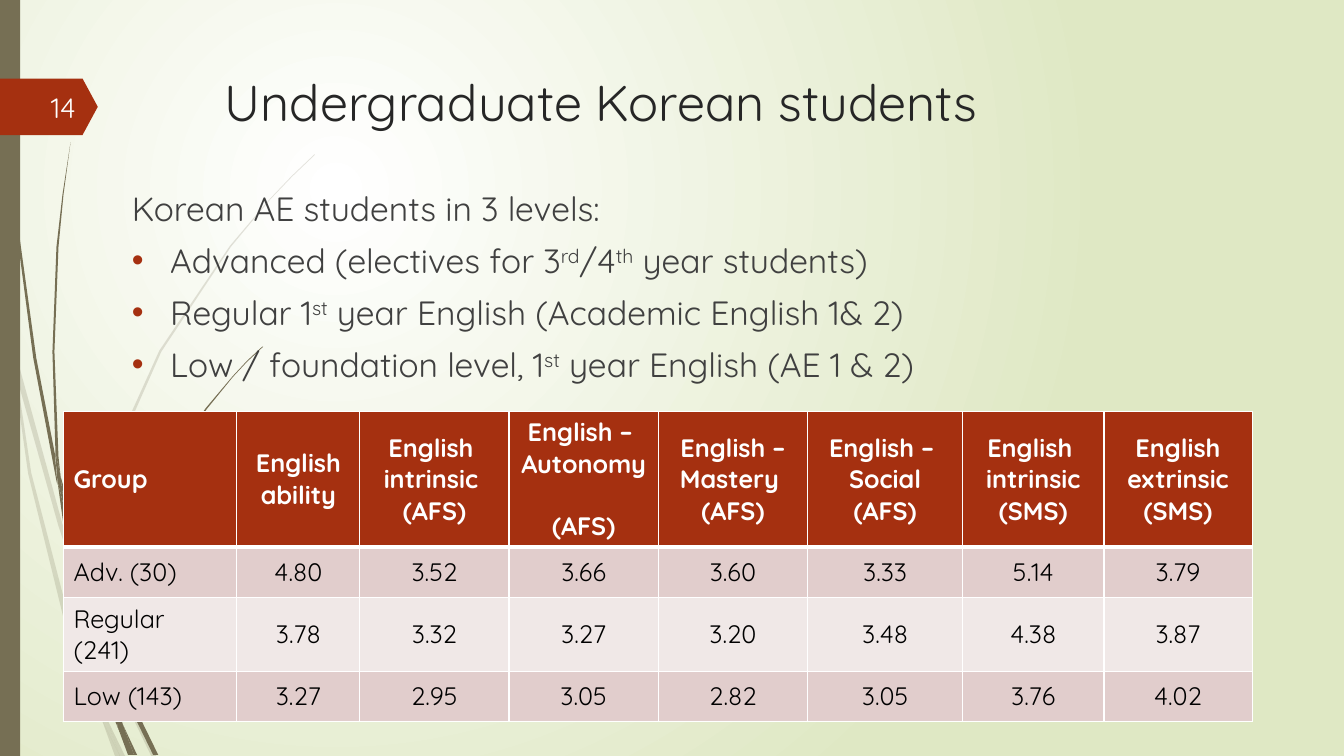
from pptx import Presentation
from pptx.dml.color import RGBColor
from pptx.enum.shapes import MSO_SHAPE
from pptx.enum.text import MSO_ANCHOR, PP_ALIGN
from pptx.oxml.ns import qn
from pptx.util import Pt
from lxml.etree import SubElement

PX = 9144
FONT = "Quicksand"
WHITE = RGBColor(0xFF, 0xFF, 0xFF)
BLACK = RGBColor(0x00, 0x00, 0x00)
PALE_GREEN = RGBColor(0xDF, 0xE8, 0xC4)
OLIVE = RGBColor(0x76, 0x6F, 0x54)
RUST = RGBColor(0xA5, 0x30, 0x10)
TITLE_GREY = RGBColor(0x26, 0x26, 0x26)
BODY_GREY = RGBColor(0x40, 0x40, 0x40)
NUMBER_WHITE = RGBColor(0xFE, 0xFF, 0xFF)
ROSE = RGBColor(0xE1, 0xCD, 0xCC)
LIGHT_ROSE = RGBColor(0xF0, 0xE8, 0xE7)

FAINT_GRASS = [
    [(11, 350), (9, 322), (0, 282), (0, 299), (10, 344)],
    [(58, 522), (84, 599), (85, 586), (62, 520), (14, 345), (17, 376)],
    [(92, 607), (88, 596), (88, 610), (123, 694), (150, 750), (155, 750), (127, 692)],
    [(119, 750), (124, 750), (105, 711)],
    [(93, 683), (70, 619), (31, 469), (17, 376), (11, 350), (28, 470), (65, 621),
     (92, 693), (101, 714), (99, 707)],
    [(84, 599), (87, 646), (93, 683), (96, 692), (105, 711), (103, 706), (91, 646),
     (88, 610), (88, 608)],
    [(88, 584), (110, 462), (160, 349), (229, 245), (268, 198), (290, 175), (312, 154),
     (312, 153), (289, 175), (268, 197), (228, 244), (158, 348), (107, 461), (85, 584),
     (85, 586), (88, 596)],
    [(101, 714), (114, 750), (119, 750)],
    [(88, 608), (88, 610), (88, 596), (85, 586), (84, 599)],
    [(96, 692), (93, 683), (99, 707), (101, 714), (119, 750), (105, 711)],
]
DARK_GRASS = [
    [(7, 110), (17, 233), (33, 355), (56, 477), (57, 481), (55, 457), (55, 453),
     (36, 355), (19, 232), (8, 109), (5, 48), (4, 0), (3, 0), (4, 48)],
    [(88, 592), (106, 645), (106, 633), (106, 631), (93, 590), (60, 472), (64, 505)],
    [(113, 649), (110, 641), (111, 656), (132, 708), (152, 749), (157, 749), (136, 706)],
    [(110, 691), (98, 657), (72, 556), (64, 505), (57, 477), (68, 557), (93, 659),
     (111, 708), (117, 722), (116, 717)],
    [(60, 472), (58, 453), (54, 349), (58, 245), (63, 193), (70, 141), (62, 193),
     (56, 245), (52, 349), (55, 449)],
    [(133, 749), (136, 749), (122, 719)],
    [(57, 477), (64, 505), (60, 472), (55, 449), (55, 453)],
    [(111, 633), (125, 552), (158, 476), (205, 406), (231, 374), (245, 359), (261, 344),
     (260, 344), (245, 358), (231, 373), (204, 405), (156, 474), (122, 551), (106, 631),
     (110, 641)],
    [(117, 722), (127, 749), (131, 749)],
    [(106, 645), (110, 691), (116, 706), (122, 719), (121, 716), (111, 656), (109, 651)],
    [(106, 645), (109, 651), (111, 656), (110, 641), (106, 631), (106, 633)],
    [(116, 706), (110, 691), (116, 717), (117, 722), (130, 749), (133, 749), (122, 719)],
]

LEVELS = [
    "Advanced (electives for 3^rd^/4^th^ year students)",
    "Regular 1^st^ year English (Academic English 1& 2)",
    "Low / foundation level, 1^st^ year English (AE 1 & 2)",
]
SCORES = [
    ["Group", "English\nability", "English \nintrinsic \n(AFS)",
     "English – \nAutonomy \n(AFS)", "English –\nMastery \n(AFS)",
     "English – \nSocial\n(AFS)", "English \nintrinsic\n(SMS)",
     "English\nextrinsic\n(SMS)"],
    ["Adv. (30)", "4.80", "3.52", "3.66", "3.60", "3.33", "5.14", "3.79"],
    ["Regular (241)", "3.78", "3.32", "3.27", "3.20", "3.48", "4.38", "3.87"],
    ["Low (143)", "3.27", "2.95", "3.05", "2.82", "3.05", "3.76", "4.02"],
]
COLUMN_WIDTHS = [172, 122, 148, 148, 148, 154, 140, 147]
ROW_HEIGHTS = [135, 50, 73, 50]


def box(*lengths):
    return [n * PX for n in lengths]


def paint_background(s):
    fill = s.background.fill
    fill.gradient()
    for stop, color in zip(fill.gradient_stops, (WHITE, PALE_GREEN)):
        stop.color.rgb = color
    lin = next(s.element.iter(qn("a:lin")))
    grad = lin.getparent()
    grad.remove(lin)
    circle = SubElement(grad, qn("a:path"), path="circle")
    SubElement(circle, qn("a:fillToRect"), l="50000", t="50000", r="100000", b="100000")


def paint(sp, color):
    sp.shadow.inherit = False
    sp.fill.solid()
    sp.fill.fore_color.rgb = color
    sp.line.fill.background()


def add_grass(s, blades, opacity=100):
    group = s.shapes.add_group_shape()
    for start, *rest in blades:
        builder = group.shapes.build_freeform(*start, scale=PX)
        builder.add_line_segments(rest, close=True)
        sp = builder.convert_to_shape()
        paint(sp, OLIVE)
        if opacity < 100:
            clr = next(sp._element.spPr.iter(qn("a:srgbClr")))
            SubElement(clr, qn("a:alpha"), val=str(opacity * 1000))


def add_block(s, kind, bounds, color):
    sp = s.shapes.add_shape(kind, *box(*bounds))
    paint(sp, color)
    return sp


def add_text_frame(s, bounds, anchor=MSO_ANCHOR.TOP):
    tf = s.shapes.add_textbox(*box(*bounds)).text_frame
    tf.word_wrap = True
    tf.vertical_anchor = anchor
    return tf


def add_run(p, text, size, color, bold=False, raised=False):
    r = p.add_run()
    r.text = text
    r.font.name = FONT
    r.font.size = Pt(size)
    r.font.bold = bold
    r.font.color.rgb = color
    if raised:
        r._r.get_or_add_rPr().set("baseline", "30000")


def add_bullet(tf, text):
    p = tf.add_paragraph()
    p.space_before = Pt(8.5)
    pPr = p._p.get_or_add_pPr()
    pPr.set("marL", str(38 * PX))
    pPr.set("indent", str(-38 * PX))
    SubElement(SubElement(pPr, qn("a:buClr")), qn("a:srgbClr"), val=str(RUST))
    SubElement(pPr, qn("a:buFont"), typeface="Arial")
    SubElement(pPr, qn("a:buChar"), char="•")
    for i, part in enumerate(text.split("^")):
        add_run(p, part, 24, BODY_GREY, raised=i % 2 == 1)


def add_borders(cell, bottom, top):
    tcPr = cell._tc.get_or_add_tcPr()
    for side, width in (("L", 1), ("R", 1), ("T", top), ("B", bottom)):
        ln = SubElement(tcPr, qn("a:ln" + side), w=str(Pt(width)))
        SubElement(SubElement(ln, qn("a:solidFill")), qn("a:srgbClr"), val=str(WHITE))


def fill_cell(cell, text, row, col):
    header = row == 0
    add_borders(cell, bottom=3 if header else 1, top=3 if row == 1 else 1)
    cell.fill.solid()
    cell.fill.fore_color.rgb = RUST if header else ROSE if row % 2 else LIGHT_ROSE
    cell.vertical_anchor = MSO_ANCHOR.MIDDLE
    p = cell.text_frame.paragraphs[0]
    p.alignment = PP_ALIGN.CENTER if col else PP_ALIGN.LEFT
    for i, line in enumerate(text.split("\n")):
        if i:
            p.add_line_break()
        add_run(p, line, 18, WHITE if header else BLACK, bold=header)
    for br in p._p.findall(qn("a:br")):
        SubElement(br, qn("a:rPr"), sz="1800")


def add_score_table(s):
    bounds = box(63, 408, sum(COLUMN_WIDTHS), sum(ROW_HEIGHTS))
    table = s.shapes.add_table(len(SCORES), len(COLUMN_WIDTHS), *bounds).table
    for column, width in zip(table.columns, COLUMN_WIDTHS):
        column.width = width * PX
    for i, (height, texts) in enumerate(zip(ROW_HEIGHTS, SCORES)):
        table.rows[i].height = height * PX
        for j, text in enumerate(texts):
            fill_cell(table.cell(i, j), text, i, j)


def main():
    prs = Presentation()
    prs.slide_width, prs.slide_height = box(1333, 750)
    s = prs.slides.add_slide(prs.slide_layouts[6])
    paint_background(s)
    add_grass(s, FAINT_GRASS, opacity=20)
    add_grass(s, DARK_GRASS)
    add_block(s, MSO_SHAPE.RECTANGLE, (0, 0, 20, 750), OLIVE)
    tag = add_block(s, MSO_SHAPE.PENTAGON, (0, 78, 97, 56), RUST)
    tag.adjustments[0] = 0.27

    title = add_text_frame(s, (213, 66, 975, 140))
    add_run(title.paragraphs[0], "Undergraduate Korean students", 36, TITLE_GREY)

    body = add_text_frame(s, (121, 181, 1092, 475))
    add_run(body.paragraphs[0], "Korean AE students in 3 levels:", 24, BODY_GREY)
    for level in LEVELS:
        add_bullet(body, level)

    number = add_text_frame(s, (0, 86, 85, 40), MSO_ANCHOR.MIDDLE)
    number.paragraphs[0].alignment = PP_ALIGN.RIGHT
    add_run(number.paragraphs[0], "14", 20, NUMBER_WHITE)

    add_score_table(s)
    prs.save("out.pptx")


if __name__ == "__main__":
    main()
